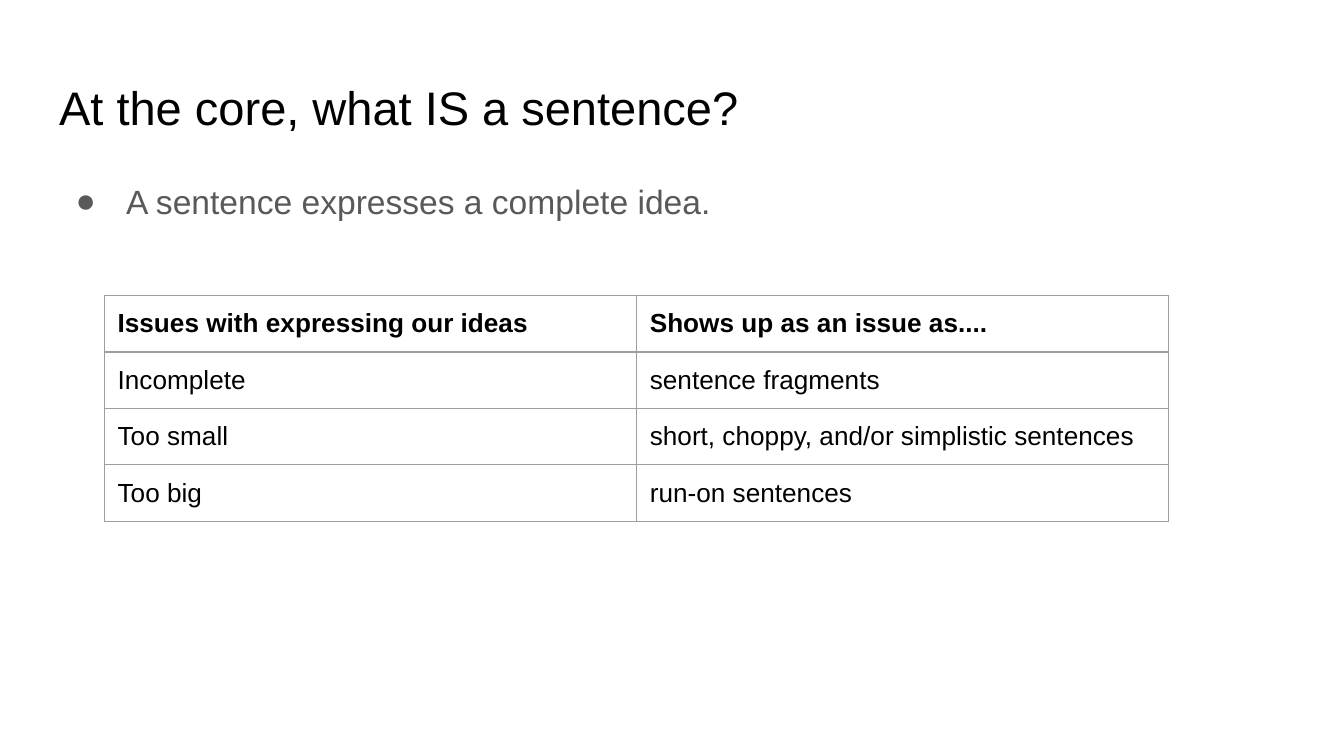
from lxml.etree import SubElement
from pptx import Presentation
from pptx.dml.color import RGBColor
from pptx.enum.text import MSO_ANCHOR, MSO_AUTO_SIZE, PP_ALIGN
from pptx.oxml.ns import qn
from pptx.util import Pt

PX = 4572  # 200 px to the inch
FONT = "Arial"
BLACK = RGBColor(0x00, 0x00, 0x00)
GRAY = RGBColor(0x59, 0x59, 0x59)
BORDER = RGBColor(0x9E, 0x9E, 0x9E)
INSET = 20
CELL_BOTTOM_INSET = 17  # keeps the rows from growing past their height
ROWS = [
    ("Issues with expressing our ideas", "Shows up as an issue as...."),
    ("Incomplete", "sentence fragments"),
    ("Too small", "short, choppy, and/or simplistic sentences"),
    ("Too big", "run-on sentences"),
]


def px(*lengths):
    return [length * PX for length in lengths]


def set_insets(target, bottom=INSET):
    """Set the insets of a text frame or table cell."""
    target.margin_left = target.margin_right = target.margin_top = INSET * PX
    target.margin_bottom = bottom * PX


def set_font(paragraph, size, color, bold=False):
    font = paragraph.font
    font.name, font.size, font.bold = FONT, Pt(size), bold
    font.color.rgb = color


def place_title(slide, box, text):
    title = slide.shapes.title
    title.left, title.top, title.width, title.height = px(*box)
    frame = title.text_frame
    frame.text = text
    frame.word_wrap = True
    frame.auto_size = MSO_AUTO_SIZE.NONE
    frame.vertical_anchor = MSO_ANCHOR.MIDDLE
    set_insets(frame)
    paragraph = frame.paragraphs[0]
    paragraph.alignment = PP_ALIGN.LEFT
    set_font(paragraph, 25.2, BLACK)


def add_bullet(paragraph, color, margin, indent):
    properties = paragraph._p.get_or_add_pPr()
    properties.set("marL", str(margin * PX))
    properties.set("indent", str(indent * PX))
    # Bullet elements must come before the default run properties.
    default_font = properties.find(qn("a:defRPr"))
    bullet_color = SubElement(properties, qn("a:buClr"))
    SubElement(bullet_color, qn("a:srgbClr"), val=str(color))
    SubElement(properties, qn("a:buFont"), typeface=FONT)
    SubElement(properties, qn("a:buChar"), char="●")
    properties.append(default_font)


def add_body(slide, box, text):
    frame = slide.shapes.add_textbox(*px(*box)).text_frame
    frame.word_wrap = True
    set_insets(frame)
    paragraph = frame.paragraphs[0]
    paragraph.text = text
    paragraph.line_spacing = 1.15
    set_font(paragraph, 18, GRAY)
    add_bullet(paragraph, GRAY, 100, -75)


def add_borders(cell):
    properties = cell._tc.get_or_add_tcPr()
    for position, side in enumerate(("a:lnL", "a:lnR", "a:lnT", "a:lnB")):
        line = properties.makeelement(qn(side), {"w": str(int(Pt(0.75)))})
        properties.insert(position, line)
        fill = SubElement(line, qn("a:solidFill"))
        SubElement(fill, qn("a:srgbClr"), val=str(BORDER))


def add_issue_table(slide, box, rows):
    """Add the grid of issues, with a bold first row."""
    table = slide.shapes.add_table(len(rows), len(rows[0]), *px(*box)).table
    table.horz_banding = False
    for row_index, texts in enumerate(rows):
        for column_index, text in enumerate(texts):
            cell = table.cell(row_index, column_index)
            cell.text = text
            cell.fill.background()
            set_insets(cell, CELL_BOTTOM_INSET)
            add_borders(cell)
            set_font(cell.text_frame.paragraphs[0], 14, BLACK, bold=row_index == 0)


def main():
    presentation = Presentation()
    presentation.slide_width, presentation.slide_height = px(2000, 1125)
    slide = presentation.slides.add_slide(presentation.slide_layouts[5])
    place_title(slide, (68, 97, 1864, 125), "At the core, what IS a sentence?")
    add_body(slide, (68, 240, 1864, 748), "A sentence expresses a complete idea.")
    add_issue_table(slide, (155, 440, 1584, 336), ROWS)
    presentation.save("out.pptx")


if __name__ == "__main__":
    main()
